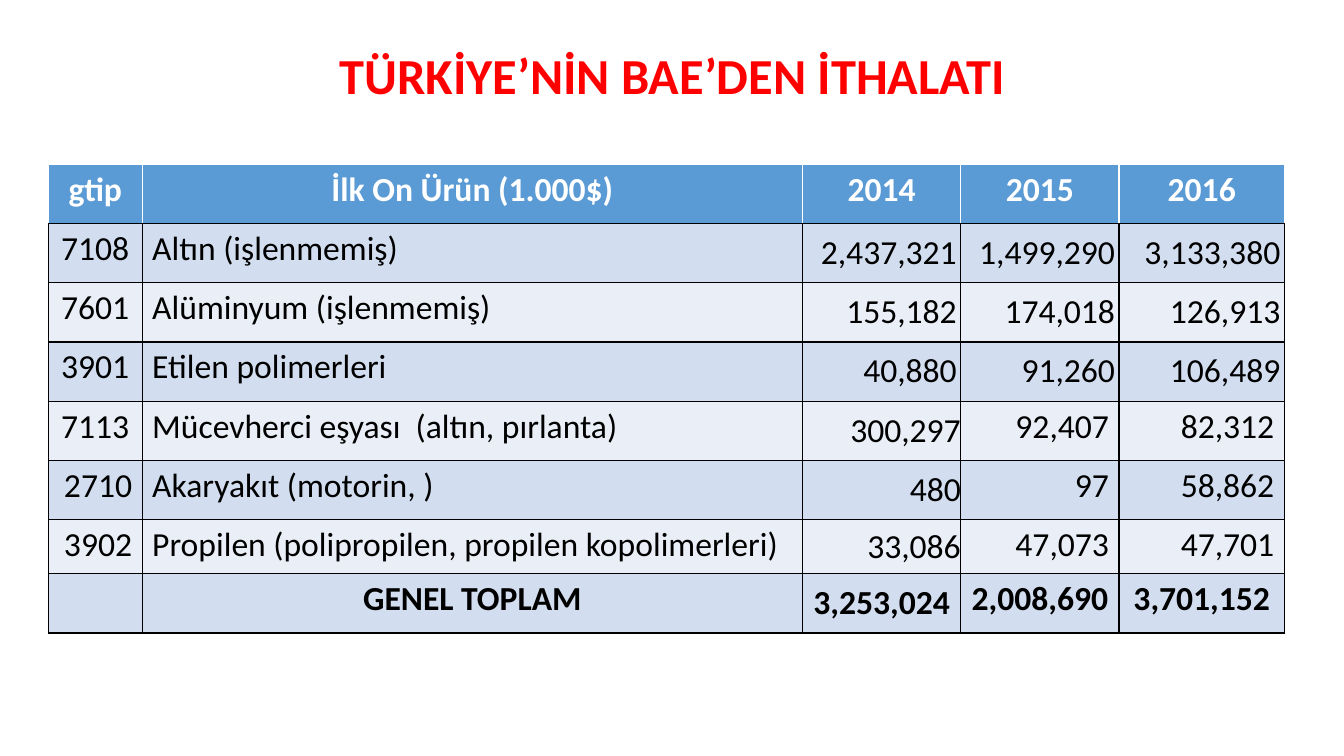
from lxml import etree
from pptx import Presentation
from pptx.dml.color import RGBColor
from pptx.enum.text import MSO_ANCHOR, PP_ALIGN
from pptx.oxml.ns import qn
from pptx.util import Inches, Pt

LEFT, CENTER, RIGHT = PP_ALIGN.LEFT, PP_ALIGN.CENTER, PP_ALIGN.RIGHT
TOP, MIDDLE = MSO_ANCHOR.TOP, MSO_ANCHOR.MIDDLE
TITLE_ONLY = 5

FONT = "Calibri"
RED, BLACK, WHITE = "FF0000", "000000", "FFFFFF"
HEADER_BLUE = "5B9BD5"
BANDS = ("D2DEEF", "EAEFF7")

COLUMN_WIDTHS = (0.93, 6.55, 1.57, 1.57, 1.64)
ROW_HEIGHTS = (0.59,) * 6 + (0.54, 0.59)
IMPORTS = (
    ("gtip", "İlk On Ürün (1.000$)", "2014", "2015", "2016"),
    ("7108", "Altın (işlenmemiş)", "2,437,321", "1,499,290", "3,133,380"),
    ("7601", "Alüminyum (işlenmemiş)", "155,182", "174,018", "126,913"),
    ("3901", "Etilen polimerleri", "40,880", "91,260", "106,489"),
    ("7113", "Mücevherci eşyası  (altın, pırlanta)", "300,297", "92,407", "82,312"),
    ("2710", "Akaryakıt (motorin, )", "480", "97", "58,862"),
    ("3902", "Propilen (polipropilen, propilen kopolimerleri)",
     "33,086", "47,073", "47,701"),
    ("", "GENEL TOPLAM", "3,253,024", "2,008,690", "3,701,152"),
)
TOTAL_ROW = len(IMPORTS) - 1


def rgb(color):
    return RGBColor.from_string(color)


def format_text(frame, size, color, bold, align):
    for paragraph in frame.paragraphs:
        paragraph.alignment = align
        paragraph.font.size = Pt(size)
        for run in paragraph.runs:
            run.font.name = FONT
            run.font.size = Pt(size)
            run.font.bold = bold
            run.font.color.rgb = rgb(color)


def set_borders(cell, colors):
    """Draw 1 pt borders; colors run left, right, top, bottom."""
    properties = cell._tc.get_or_add_tcPr()
    for side, color in zip("LRTB", colors):
        line = etree.SubElement(properties, qn(f"a:ln{side}"), w=str(Pt(1)))
        fill = etree.SubElement(line, qn("a:solidFill"))
        etree.SubElement(fill, qn("a:srgbClr"), val=color)


def cell_alignment(row, column):
    if row in (0, TOTAL_ROW):
        return CENTER
    if column == 1:
        return LEFT
    # The last two product codes sit to the right
    return CENTER if column == 0 and row < 5 else RIGHT


def cell_inset(row, column):
    """Return the tight inset of a figure cell, or None for the usual one."""
    if 1 <= row <= 3 and column >= 2:
        return 0.04
    return 0 if row >= 4 and column == 2 else None


def style_cell(cell, row, column):
    header = row == 0
    # Borders come before the fill in the cell properties
    set_borders(cell, (WHITE,) * 3 + (BLACK,) if header else (BLACK,) * 4)
    cell.fill.solid()
    cell.fill.fore_color.rgb = rgb(HEADER_BLUE if header else BANDS[(row - 1) % 2])

    inset = cell_inset(row, column)
    cell.vertical_anchor = TOP if inset is None else MIDDLE
    if inset is not None:
        cell.margin_left = cell.margin_right = Inches(inset)
        cell.margin_top = cell.margin_bottom = Inches(inset)
    format_text(cell.text_frame, 24, WHITE if header else BLACK,
                row in (0, TOTAL_ROW), cell_alignment(row, column))


def add_title(slide, left, top, width, height):
    title = slide.shapes.title
    title.left, title.top = Inches(left), Inches(top)
    title.width, title.height = Inches(width), Inches(height)
    frame = title.text_frame
    frame.text = "TÜRKİYE’NİN BAE’DEN İTHALATI"
    frame.word_wrap = True
    frame.vertical_anchor = MIDDLE
    frame.paragraphs[0].line_spacing = 0.9
    format_text(frame, 36, RED, True, CENTER)


def add_import_table(slide, left, top, width, height):
    table = slide.shapes.add_table(
        len(IMPORTS), len(COLUMN_WIDTHS),
        Inches(left), Inches(top), Inches(width), Inches(height)).table
    # Share the box out in proportion to the listed sizes
    for column, share in zip(table.columns, COLUMN_WIDTHS):
        column.width = Inches(width * share / sum(COLUMN_WIDTHS))
    for row, share in zip(table.rows, ROW_HEIGHTS):
        row.height = Inches(height * share / sum(ROW_HEIGHTS))
    for row, entries in enumerate(IMPORTS):
        for column, entry in enumerate(entries):
            cell = table.cell(row, column)
            cell.text_frame.text = entry
            style_cell(cell, row, column)


def main():
    presentation = Presentation()
    presentation.slide_width = Inches(13.33)
    presentation.slide_height = Inches(7.5)
    slide = presentation.slides.add_slide(presentation.slide_layouts[TITLE_ONLY])
    add_title(slide, 0.92, 0.4, 11.5, 0.75)
    add_import_table(slide, 0.48, 1.63, 12.26, 4.65)
    presentation.save("out.pptx")


if __name__ == "__main__":
    main()
